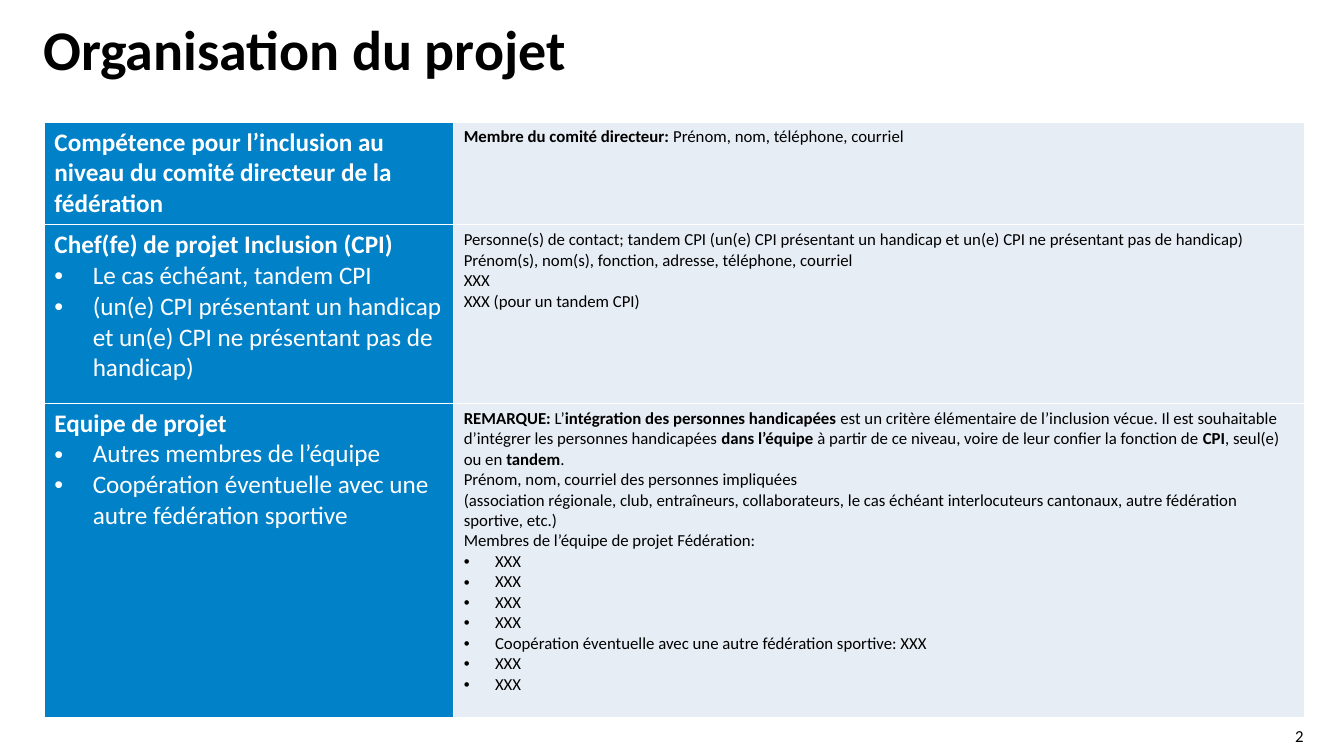
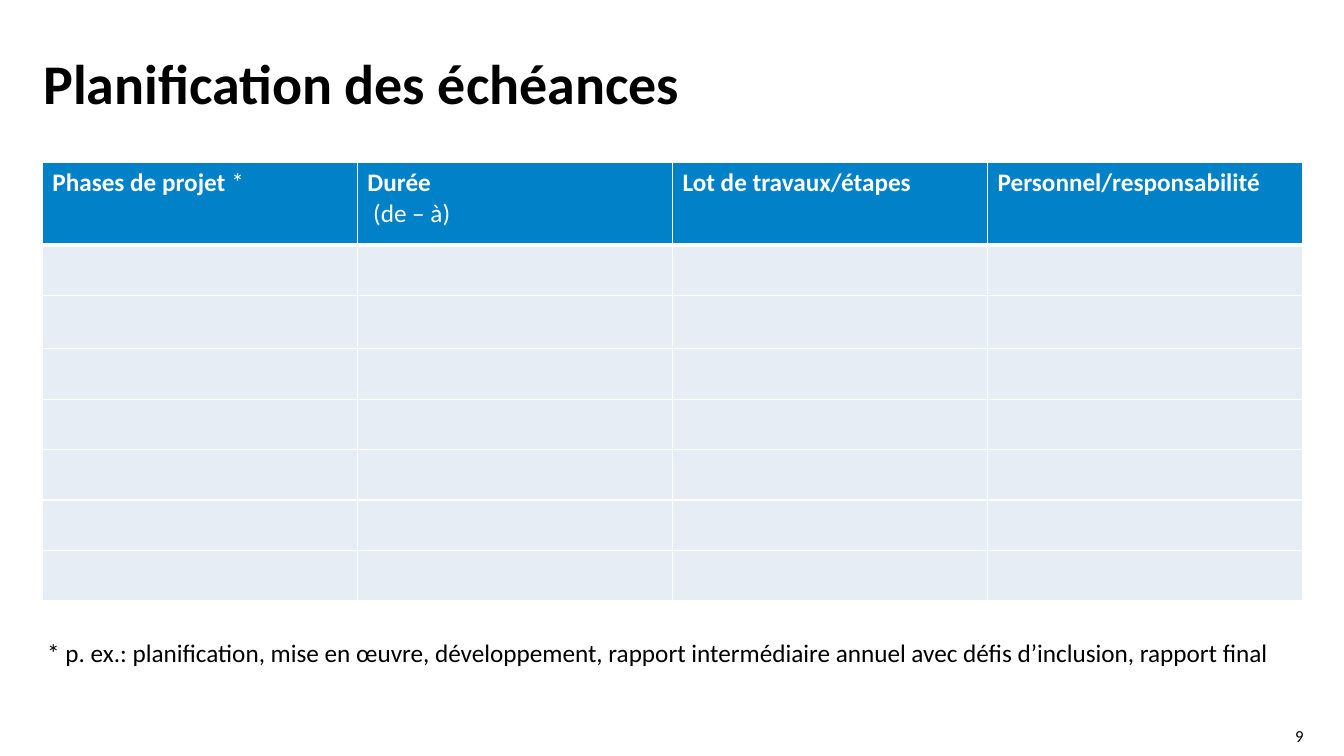
from lxml import etree
from pptx import Presentation
from pptx.dml.color import RGBColor
from pptx.enum.text import MSO_ANCHOR, MSO_AUTO_SIZE, PP_ALIGN
from pptx.oxml.ns import qn
from pptx.util import Inches, Pt

TOP, MIDDLE = MSO_ANCHOR.TOP, MSO_ANCHOR.MIDDLE
LEFT, RIGHT = PP_ALIGN.LEFT, PP_ALIGN.RIGHT
NO_AUTOFIT = MSO_AUTO_SIZE.NONE
FONT = "Calibri"
COLORS = {"blue": "0081C8", "pale": "E7EDF5", "white": "FFFFFF", "black": "000000"}
TABLE_WIDTH = 12.5


def write(frame, lines, size, color="black", indent=0.38):
    for number, line in enumerate(lines):
        para = frame.paragraphs[0] if number == 0 else frame.add_paragraph()
        if line.startswith("• "):
            line = line[2:]
            properties = para._p.get_or_add_pPr()
            properties.set("marL", str(Inches(indent)))
            properties.set("indent", str(-Inches(indent)))
            etree.SubElement(properties, qn("a:buFont")).set("typeface", "Arial")
            etree.SubElement(properties, qn("a:buChar")).set("char", "•")
        first, *others = line.split("**")
        para.text = first
        for span in para.runs:
            span.font.bold = False
        for position, part in enumerate(others):
            if part:
                span = para.add_run()
                span.text = part
                span.font.bold = position % 2 == 0
        for span in para.runs:
            span.font.name = FONT
            span.font.size = Pt(size)
            span.font.color.rgb = RGBColor.from_string(COLORS[color])


def paint(cell, color, top=1, bottom=1):
    cell.fill.solid()
    cell.fill.fore_color.rgb = RGBColor.from_string(COLORS[color])
    properties = cell._tc.get_or_add_tcPr()
    for position, (side, width) in enumerate(
        [("L", 1), ("R", 1), ("T", top), ("B", bottom)]
    ):
        border = etree.Element(qn(f"a:ln{side}"), w=str(Pt(width)))
        fill = etree.SubElement(border, qn("a:solidFill"))
        etree.SubElement(fill, qn("a:srgbClr")).set("val", COLORS["white"])
        properties.insert(position, border)


ORGANISATION = [
    (
        ["**Compétence pour l’inclusion au niveau du comité directeur de la fédération**"],
        ["**Membre du comité directeur: **Prénom, nom, téléphone, courriel"],
    ),
    (
        [
            "**Chef(fe) de projet Inclusion (CPI)**",
            "• Le cas échéant, tandem CPI",
            "• (un(e) CPI présentant un handicap et un(e) CPI ne présentant pas de handicap)",
        ],
        [
            "Personne(s) de contact; tandem CPI (un(e) CPI présentant un handicap "
            "et un(e) CPI ne présentant pas de handicap)",
            "Prénom(s), nom(s), fonction, adresse, téléphone, courriel",
            "XXX",
            "XXX (pour un tandem CPI)",
        ],
    ),
    (
        [
            "**Equipe de projet**",
            "• Autres membres de l’équipe",
            "• Coopération éventuelle avec une autre fédération sportive",
        ],
        [
            "**REMARQUE:** L’**intégration des personnes handicapées** est un critère "
            "élémentaire de l’inclusion vécue. Il est souhaitable d’intégrer les personnes "
            "handicapées **dans l’équipe** à partir de ce niveau, voire de leur confier la "
            "fonction de **CPI**, seul(e) ou en **tandem**.",
            "Prénom, nom, courriel des personnes impliquées \n"
            "(association régionale, club, entraîneurs, collaborateurs, le cas échéant "
            "interlocuteurs cantonaux, autre fédération sportive, etc.)",
            "Membres de l’équipe de projet Fédération:",
            *["• XXX"] * 4,
            "• Coopération éventuelle avec une autre fédération sportive: XXX",
            *["• XXX"] * 2,
        ],
    ),
]
PHASES = [
    ["**Phases de projet ***"],
    ["**Durée**", " (de – à)"],
    ["**Lot de travaux/étapes**"],
    ["**Personnel/responsabilité**"],
]
PAGES = [
    {
        "title": "Organisation du projet", "title_top": 0.22, "title_height": 1.07,
        "number": "2", "left": 0.44, "top": 1.21,
        "columns": [4.06, 8.44], "rows": [1.02, 1.77, 3.12],
    },
    {
        "title": "Planification des échéances", "title_top": 0.56, "title_height": 0.85,
        "number": "9", "left": 0.42, "top": 1.61,
        "columns": [TABLE_WIDTH / 4] * 4, "rows": [0.82, 0.5, 0.53] + [0.5] * 5,
    },
]

deck = Presentation()
deck.slide_width, deck.slide_height = Inches(13.33), Inches(7.5)
pages, tables = [], []

for layout in PAGES:
    page = deck.slides.add_slide(deck.slide_layouts[5])
    title = page.shapes.title
    title.left, title.top = Inches(0.43), Inches(layout["title_top"])
    title.width, title.height = Inches(10), Inches(layout["title_height"])
    number = page.shapes.add_textbox(Inches(12.46), Inches(7.2), Inches(0.47), Inches(0.2))
    for box, text, size, anchor, align in [
        (title, f"**{layout['title']}**", 40, TOP, LEFT),
        (number, layout["number"], 12, MIDDLE, RIGHT),
    ]:
        frame = box.text_frame
        frame.margin_left = frame.margin_right = frame.margin_top = frame.margin_bottom = 0
        frame.word_wrap = True
        frame.auto_size = NO_AUTOFIT
        frame.vertical_anchor = anchor
        write(frame, [text], size)
        frame.paragraphs[0].alignment = align
    title.text_frame.paragraphs[0].line_spacing = 0.9

    rows, columns = layout["rows"], layout["columns"]
    table = page.shapes.add_table(
        len(rows), len(columns), Inches(layout["left"]), Inches(layout["top"]),
        Inches(TABLE_WIDTH), Inches(sum(rows)),
    ).table
    table.first_row = table.horz_banding = False
    for row, height in zip(table.rows, rows):
        row.height = Inches(height)
    for column, width in zip(table.columns, columns):
        column.width = Inches(width)
    pages.append(page)
    tables.append(table)

organisation, schedule = tables
for row, (role, details) in zip(organisation.rows, ORGANISATION):
    label, content = row.cells
    paint(label, "blue")
    paint(content, "pale")
    write(label.text_frame, role, 18, "white")
    write(content.text_frame, details, 12, indent=0.31)

for index, row in enumerate(schedule.rows):
    for cell, heading in zip(row.cells, PHASES):
        if index == 0:
            paint(cell, "blue", bottom=3)
            write(cell.text_frame, heading, 18, "white")
        else:
            paint(cell, "pale", top=3 if index == 1 else 1)

note = pages[1].shapes.add_textbox(Inches(0.37), Inches(6.27), Inches(12.5), Inches(0.71))
note.text_frame.word_wrap = True
write(
    note.text_frame,
    ["* p. ex.: planification, mise en œuvre, développement, rapport intermédiaire annuel "
     "avec défis d’inclusion, rapport final"],
    18,
)

deck.save("out.pptx")
